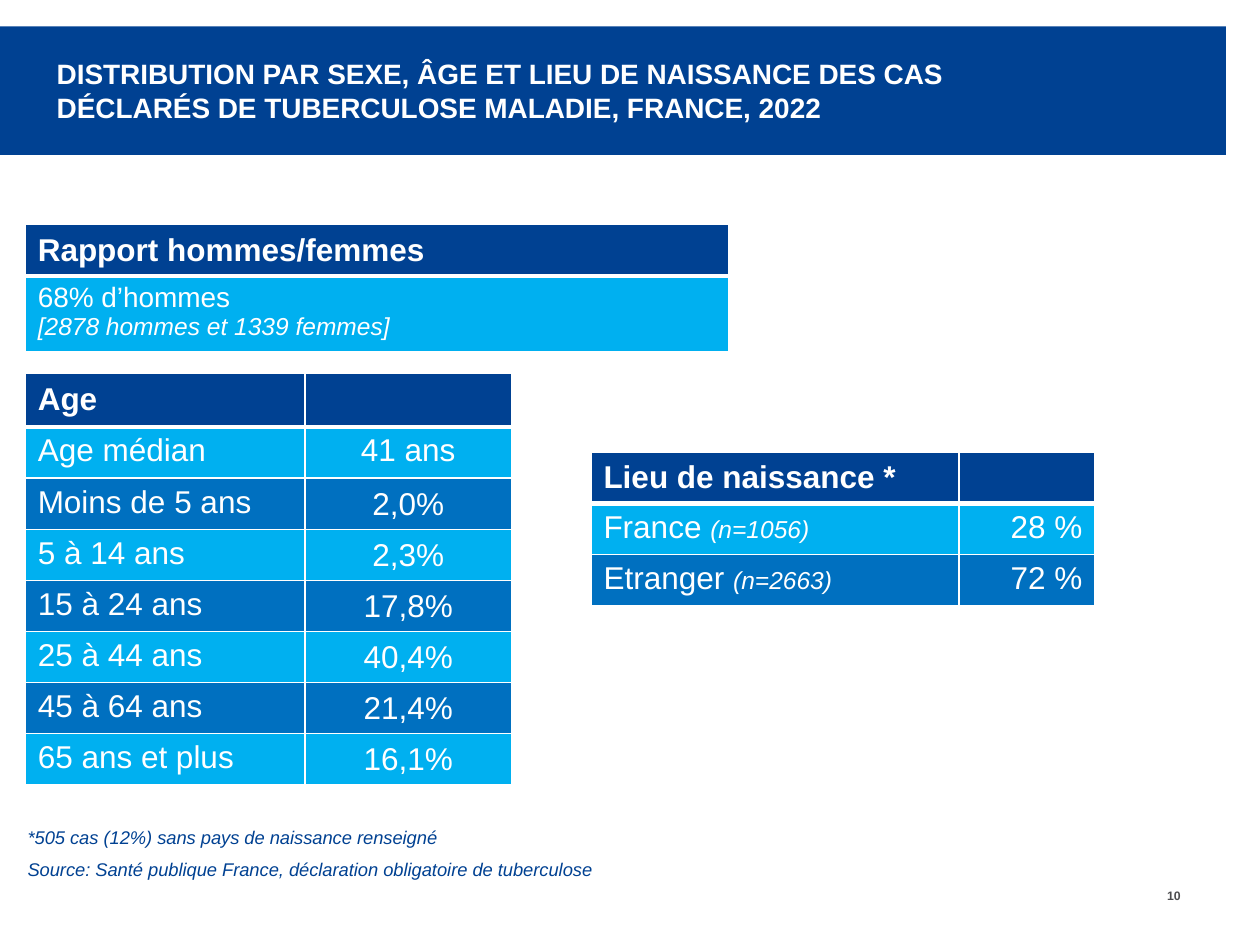
import pptx
import pptx.dml.color
import pptx.enum.shapes
import pptx.enum.text
import pptx.oxml
import pptx.oxml.ns
import pptx.util

Inches = pptx.util.Inches
ALIGN = pptx.enum.text.PP_ALIGN
ANCHOR = pptx.enum.text.MSO_ANCHOR

NAVY, SKY, BLUE, WHITE, GREY = "004192", "00B0F0", "0070C0", "FFFFFF", "4D4D4F"

TITLE = ("DISTRIBUTION PAR SEXE, ÂGE ET LIEU DE NAISSANCE DES CAS "
         "DÉCLARÉS DE TUBERCULOSE MALADIE, FRANCE, 2022")
NOTES = ["*505 cas (12%) sans pays de naissance renseigné",
         "Source: Santé publique France, déclaration obligatoire de tuberculose"]
PAGE_NUMBER = "10"

HEADER = {"size": 18, "bold": True}
BODY = {"size": 18}
DETAIL = {"size": 14, "italic": True}

# Each cell is a list of (text, format) runs; a vertical tab is a line break.
TABLES = [
    {"left": 0.2, "top": 1.78, "columns": [5.58], "rows": [0.41, 0.6], "align": ALIGN.LEFT,
     "cells": [[[("Rapport hommes/femmes", HEADER)]],
               [[("68% d’hommes\v", {"size": 16}), ("[2878 hommes et 1339 femmes]", DETAIL)]]]},
    {"left": 0.2, "top": 2.96, "columns": [2.22, 1.64], "rows": [0.43] + [2.84 / 7] * 7,
     "align": ALIGN.CENTER, "tight_from": 2,
     "cells": [[[("Age", HEADER)], []]] + [
         [[(label, BODY)], [(value, BODY)]] for label, value in [
             ("Age médian", "41 ans"), ("Moins de 5 ans", "2,0%"), ("5 à 14 ans", "2,3%"),
             ("15 à 24 ans", "17,8%"), ("25 à 44 ans", "40,4%"), ("45 à 64 ans", "21,4%"),
             ("65 ans et plus", "16,1%")]]},
    {"left": 4.69, "top": 3.59, "columns": [2.92, 1.08], "rows": [1.22 / 3] * 3,
     "align": ALIGN.RIGHT,
     "cells": [[[("Lieu de naissance *", HEADER)], []]] + [
         [[(place + " ", BODY), (count, DETAIL)], [(share, BODY)]] for place, count, share in [
             ("France", "(n=1056)", "28 %"), ("Etranger", "(n=2663)", "72 %")]]},
]


def color(value):
    return pptx.dml.color.RGBColor.from_string(value)


def box(left, top, width, height):
    return [Inches(length) for length in (left, top, width, height)]


def set_attributes(target, values):
    for name, value in values.items():
        setattr(target, name, value)


def add_runs(paragraph, runs, fill=WHITE):
    for text, style in runs:
        if text.endswith("\v"):
            run = paragraph.add_run()
            paragraph.add_line_break()
        else:
            run = paragraph.add_run()
        run.text = text.rstrip("\v")
        set_attributes(run.font, {"name": "Arial", "bold": False, "italic": False, **style,
                                  "size": pptx.util.Pt(style["size"])})
        run.font.color.rgb = color(fill)


def set_borders(cell, widths):
    """Draw white cell borders; widths maps L, R, T, B to points, in that order."""
    properties = cell._tc.get_or_add_tcPr()
    for index, (side, points) in enumerate(widths.items()):
        properties.insert(index, pptx.oxml.parse_xml(
            f'<a:ln{side} {pptx.oxml.ns.nsdecls("a")} w="{pptx.util.Pt(points)}">'
            f'<a:solidFill><a:srgbClr val="{WHITE}"/></a:solidFill></a:ln{side}>'))


def add_table(slide, data):
    columns, rows = data["columns"], data["rows"]
    table = slide.shapes.add_table(
        len(rows), len(columns),
        *box(data["left"], data["top"], sum(columns), sum(rows))).table
    for column, width in zip(table.columns, columns):
        column.width = Inches(width)
    for row_index, (row, height) in enumerate(zip(table.rows, rows)):
        row.height = Inches(height)
        for column_index, cell in enumerate(row.cells):
            cell.fill.solid()
            cell.fill.fore_color.rgb = color(
                NAVY if row_index == 0 else SKY if row_index % 2 else BLUE)
            set_borders(cell, {"L": 1, "R": 1, "T": 3 if row_index == 1 else 1,
                               "B": 3 if row_index == 0 else 1})
            cell.vertical_anchor = ANCHOR.TOP if row_index else ANCHOR.MIDDLE
            paragraph = cell.text_frame.paragraphs[0]
            if column_index:
                paragraph.alignment = data["align"]
                if row_index >= data.get("tight_from", len(rows)):
                    set_attributes(cell, {
                        "vertical_anchor": ANCHOR.MIDDLE, "margin_left": Inches(0.01),
                        "margin_right": Inches(0.01), "margin_top": Inches(0.01),
                        "margin_bottom": 0})
            add_runs(paragraph, data["cells"][row_index][column_index])


def add_banner(slide):
    banner = slide.shapes.add_shape(
        pptx.enum.shapes.MSO_SHAPE.RECTANGLE, *box(0, 0.21, 9.73, 1.02))
    banner.shadow.inherit = False
    banner.fill.solid()
    banner.fill.fore_color.rgb = color(NAVY)
    banner.line.fill.background()
    # The title placeholder must lie above the banner.
    slide.shapes._spTree.insert(2, banner._element)


def add_title(slide):
    title = slide.shapes.title
    set_attributes(title, dict(zip(("left", "top", "width", "height"),
                                   box(0.35, 0.36, 8.11, 0.71))))
    set_attributes(title.text_frame, {"word_wrap": True, "vertical_anchor": ANCHOR.MIDDLE,
                                      "auto_size": pptx.enum.text.MSO_AUTO_SIZE.NONE})
    paragraph = title.text_frame.paragraphs[0]
    paragraph.alignment = ALIGN.LEFT
    add_runs(paragraph, [(TITLE, {"size": 16, "bold": True})])


def add_notes(slide):
    frame = slide.shapes.add_textbox(*box(0.12, 6.51, 9.61, 0.54)).text_frame
    frame.word_wrap = True
    for index, note in enumerate(NOTES):
        paragraph = frame.add_paragraph() if index else frame.paragraphs[0]
        if index:
            paragraph.space_before = pptx.util.Pt(5.5)
        add_runs(paragraph, [(note, {"size": 10.5, "italic": True})], NAVY)


def add_page_number(slide):
    frame = slide.shapes.add_textbox(*box(9.14, 7.05, 0.27, 0.13)).text_frame
    set_attributes(frame, {"word_wrap": False, "margin_left": Inches(0.04),
                           "margin_right": Inches(0.04), "margin_top": 0, "margin_bottom": 0})
    frame.paragraphs[0].alignment = ALIGN.RIGHT
    add_runs(frame.paragraphs[0], [(PAGE_NUMBER, {"size": 7, "bold": True})], GREY)


def main():
    presentation = pptx.Presentation()
    set_attributes(presentation, {"slide_width": Inches(10), "slide_height": Inches(7.5)})
    slide = presentation.slides.add_slide(presentation.slide_layouts[5])
    add_banner(slide)
    add_title(slide)
    for data in TABLES:
        add_table(slide, data)
    add_notes(slide)
    add_page_number(slide)
    presentation.save("out.pptx")


if __name__ == "__main__":
    main()
